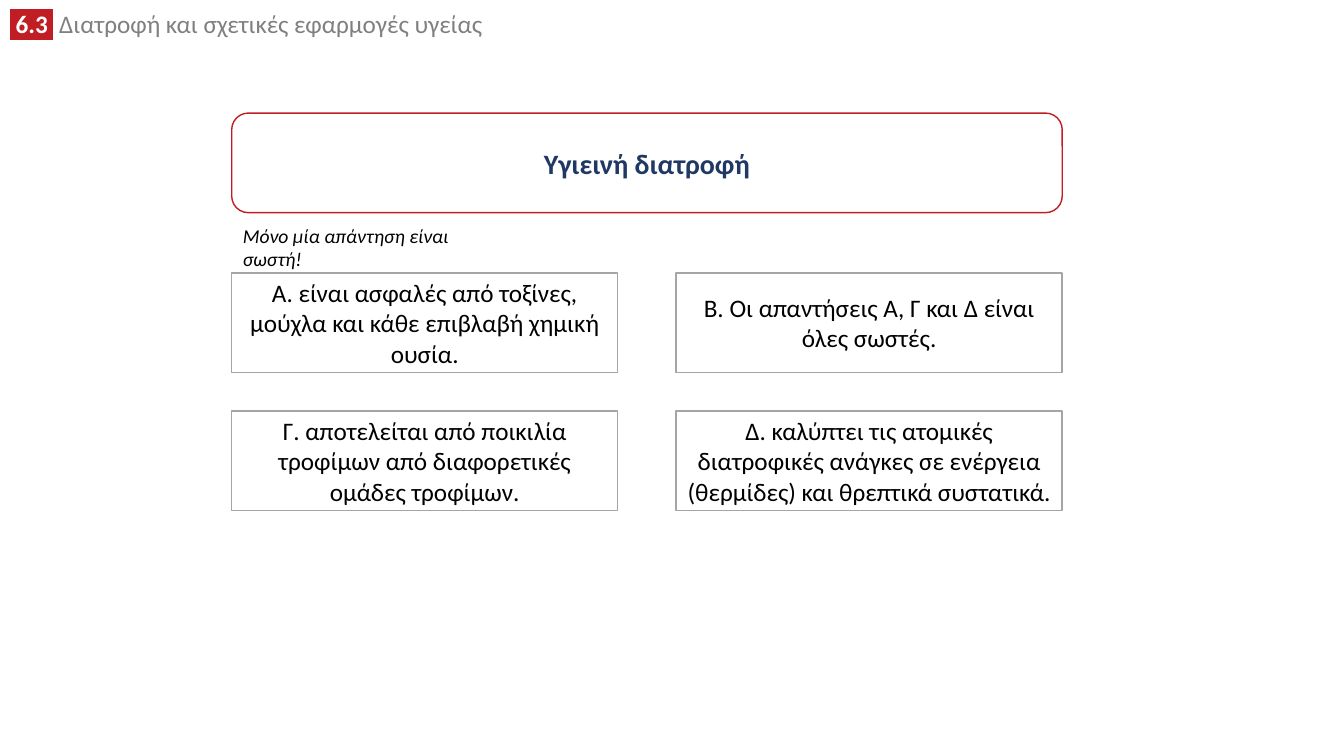
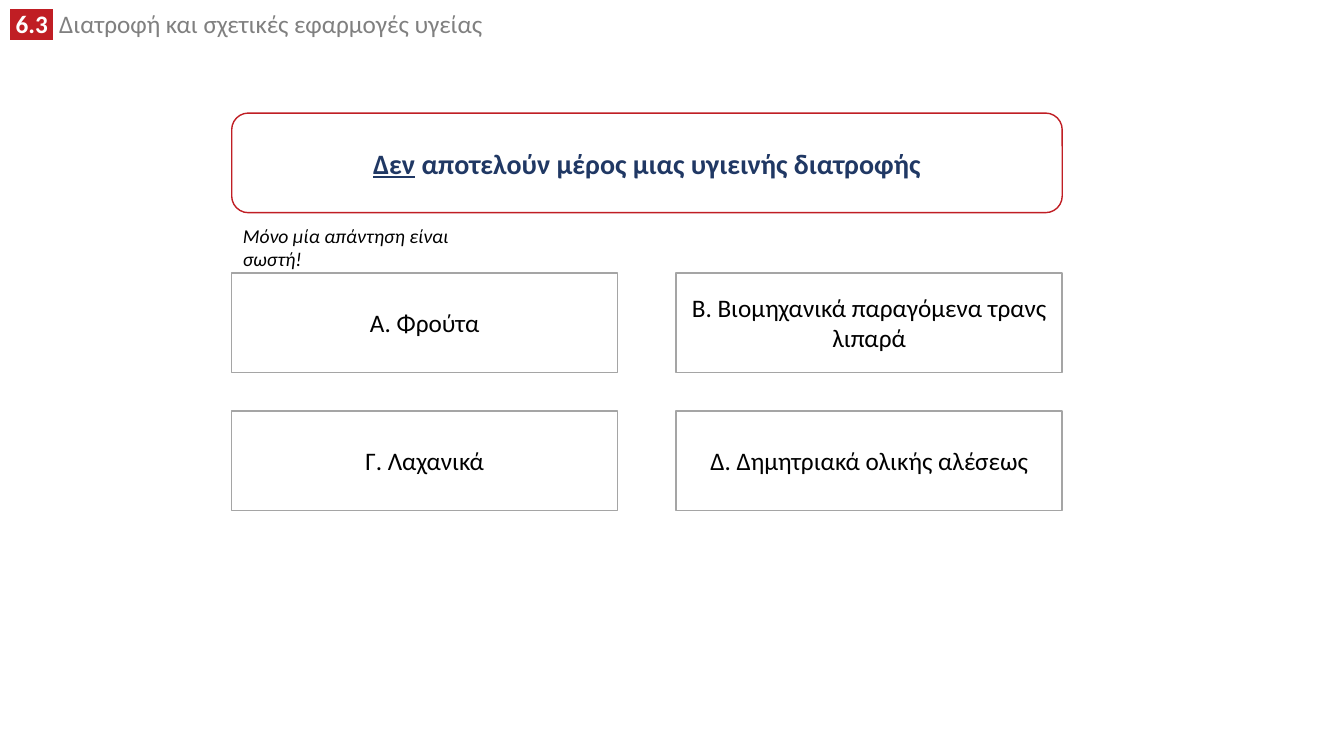
"""Builds two quiz slides on healthy nutrition."""
from lxml import etree
from pptx import Presentation
from pptx.dml.color import RGBColor
from pptx.enum.shapes import MSO_SHAPE
from pptx.enum.text import MSO_ANCHOR, MSO_AUTO_SIZE, PP_ALIGN
from pptx.oxml.ns import qn
from pptx.util import Cm, Pt

RECTANGLE, ROUNDED = MSO_SHAPE.RECTANGLE, MSO_SHAPE.ROUNDED_RECTANGLE
TOP, MIDDLE = MSO_ANCHOR.TOP, MSO_ANCHOR.MIDDLE
LEFT, CENTER = PP_ALIGN.LEFT, PP_ALIGN.CENTER
NO_FIT = MSO_AUTO_SIZE.NONE

SECTION_NUMBER = " 6.3 "
SECTION_NAME = " Διατροφή και σχετικές εφαρμογές υγείας"
HINT = "Μόνο μία απάντηση είναι σωστή!"
QUIZ = [
    {
        "question": [("Υγιεινή διατροφή", {})],
        "answers": [
            "Α. είναι ασφαλές από τοξίνες, μούχλα και κάθε επιβλαβή χημική ουσία.",
            "B. Οι απαντήσεις Α, Γ και Δ είναι όλες σωστές.",
            "Γ. αποτελείται από ποικιλία τροφίμων από διαφορετικές ομάδες τροφίμων.",
            "Δ. καλύπτει τις ατομικές διατροφικές ανάγκες σε ενέργεια (θερμίδες) "
            "και θρεπτικά συστατικά.",
        ],
    },
    {
        "question": [("Δεν", {"underline": True}),
                     (" αποτελούν μέρος μιας υγιεινής διατροφής", {})],
        "answers": [
            "A. Φρούτα",
            "B. Βιομηχανικά παραγόμενα τρανς λιπαρά",
            "Γ. Λαχανικά",
            "Δ. Δημητριακά ολικής αλέσεως",
        ],
    },
]

WHITE, RED, GREY = "FFFFFF", "C01E24", "A5A5A5"
FONT = "Calibri"
NUMBER_STYLE = {"size": Pt(18), "bold": True, "color": WHITE}
NAME_STYLE = {"size": Pt(18), "bold": False, "color": "808080"}
QUESTION_STYLE = {"size": Pt(20), "bold": True, "color": "203864"}
HINT_STYLE = {"size": Pt(14), "italic": True, "color": "000000"}
ANSWER_STYLE = {"size": Pt(18), "color": "000000"}

GRID_LEFT, GRID_TOP = 5.84, 6.88
CELL_WIDTH, CELL_HEIGHT = 9.73, 2.51
COLUMN_GAP, ROW_GAP = 1.47, 0.97
COLUMNS = 2
QUESTION_AREA = (GRID_LEFT, 2.85, COLUMNS * CELL_WIDTH + COLUMN_GAP, CELL_HEIGHT)
HINT_AREA = (5.87, 5.51, 6, 0.86)
HEADER_AREA = (0, 0.23, 24.18, 0.89)


def color(code):
    return RGBColor.from_string(code)


def lengths(area):
    return [Cm(value) for value in area]


def write(box, runs, align=LEFT, anchor=TOP):
    frame = box.text_frame
    frame.word_wrap = True
    frame.auto_size = NO_FIT
    frame.vertical_anchor = anchor
    para = frame.paragraphs[0]
    para.alignment = align
    for text, style in runs:
        span = para.add_run()
        span.text = text
        span.font.name = FONT
        for name, value in style.items():
            if name == "color":
                span.font.color.rgb = color(value)
            else:
                setattr(span.font, name, value)
    return para


def add_panel(page, kind, area, outline):
    panel = page.shapes.add_shape(kind, *lengths(area))
    panel.shadow.inherit = False
    panel.fill.solid()
    panel.fill.fore_color.rgb = color(WHITE)
    panel.line.color.rgb = color(outline)
    panel.line.width = Pt(1)
    return panel


def highlight(span, code):
    fill = span.font._element.find(qn("a:solidFill")) if hasattr(span.font, "_element") \
        else span._r.get_or_add_rPr().find(qn("a:solidFill"))
    mark = etree.Element(qn("a:highlight"))
    etree.SubElement(mark, qn("a:srgbClr"), val=code)
    fill.addnext(mark)


def add_header(page):
    """Puts the section header on the layout that all slides share."""
    header = page.shapes.add_textbox(*lengths(HEADER_AREA))
    para = write(header, [(SECTION_NUMBER, NUMBER_STYLE), (SECTION_NAME, NAME_STYLE)])
    para.line_spacing = 0.8
    highlight(para.runs[0], RED)
    page.slide_layout.shapes.element.append(header.element)


def add_question(page, question):
    panel = add_panel(page, ROUNDED, QUESTION_AREA, RED)
    title = page.shapes.title
    title.element.addprevious(panel.element)
    title.left, title.top, title.width, title.height = lengths(QUESTION_AREA)
    runs = [(text, {**QUESTION_STYLE, **extra}) for text, extra in question]
    write(title, runs, CENTER, MIDDLE)


def add_answers(page, answers):
    for index, answer in enumerate(answers):
        row, column = divmod(index, COLUMNS)
        area = (GRID_LEFT + column * (CELL_WIDTH + COLUMN_GAP),
                GRID_TOP + row * (CELL_HEIGHT + ROW_GAP), CELL_WIDTH, CELL_HEIGHT)
        panel = add_panel(page, RECTANGLE, area, GREY)
        write(panel, [(answer, ANSWER_STYLE)], CENTER, MIDDLE)


def main():
    deck = Presentation()
    deck.slide_width, deck.slide_height = Cm(33.87), Cm(19.05)
    title_only = deck.slide_layouts[5]
    for number, item in enumerate(QUIZ):
        page = deck.slides.add_slide(title_only)
        if number == 0:
            add_header(page)
        add_question(page, item["question"])
        hint = page.shapes.add_textbox(*lengths(HINT_AREA))
        write(hint, [(HINT, HINT_STYLE)])
        add_answers(page, item["answers"])
    deck.save("out.pptx")


if __name__ == "__main__":
    main()
